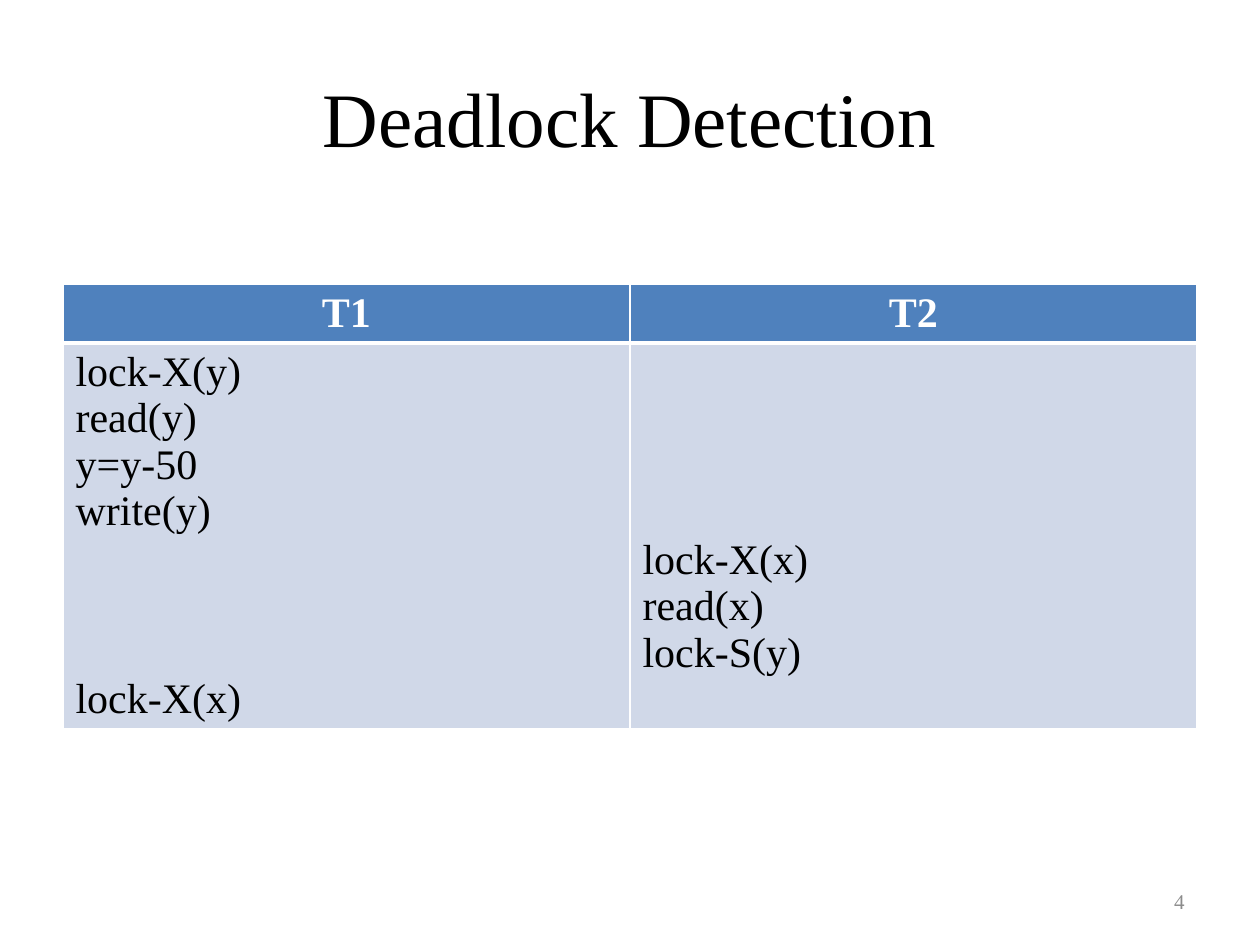
"""Builds the Deadlock Detection slide with its two-transaction schedule."""
from dataclasses import dataclass

from lxml import etree
from pptx import Presentation
from pptx import util as u
from pptx.dml.color import RGBColor
from pptx.enum import text
from pptx.oxml import ns

PX = 914400 / 126
LINE = 47
CELL_PAD = 6


@dataclass(frozen=True)
class Theme:
    font: str = "Times New Roman"
    ink: str = "000000"
    paper: str = "FFFFFF"
    header: str = "4F81BD"
    body: str = "D0D8E8"
    muted: str = "8C8C8C"
    title_size: int = 44
    table_size: int = 24
    number_size: int = 12
    thin: int = 1
    thick: int = 3


THEME = Theme()


def px(count):
    return u.Emu(round(count * PX))


def write(frame, lines, size, color=THEME.ink, bold=False,
          align=text.PP_ALIGN.LEFT, gaps=None):
    for index, line in enumerate(lines):
        para = frame.paragraphs[0] if index == 0 else frame.add_paragraph()
        para.alignment = align
        if gaps and index in gaps:
            para.space_before = px(gaps[index])
        span = para.add_run()
        span.text = line
        span.font.name = THEME.font
        span.font.size = u.Pt(size)
        span.font.bold = bold
        span.font.color.rgb = RGBColor.from_string(color)


def place(shape, left, top, width, height):
    shape.left, shape.top = px(left), px(top)
    shape.width, shape.height = px(width), px(height)


def add_title(page, words):
    title = page.shapes.title
    place(title, 63, 38, 1134, 157)
    title.text_frame.vertical_anchor = text.MSO_ANCHOR.MIDDLE
    write(title.text_frame, [words], THEME.title_size, align=text.PP_ALIGN.CENTER)


def style_cell(cell, fill, top, bottom):
    properties = cell._tc.get_or_add_tcPr()
    widths = {"lnL": THEME.thin, "lnR": THEME.thin, "lnT": top, "lnB": bottom}
    for side, width in widths.items():
        line = etree.SubElement(properties, ns.qn(f"a:{side}"), w=str(u.Pt(width)))
        solid = etree.SubElement(line, ns.qn("a:solidFill"))
        etree.SubElement(solid, ns.qn("a:srgbClr"), val=THEME.paper)
    cell.fill.solid()
    cell.fill.fore_color.rgb = RGBColor.from_string(fill)


def add_schedule(page, transactions):
    table = page.shapes.add_table(
        2, len(transactions), px(63), px(284), px(1134), px(442)).table
    table.rows[0].height, table.rows[1].height = px(58), px(384)
    for column, (name, steps, lead, gaps) in enumerate(transactions):
        heading, body = table.cell(0, column), table.cell(1, column)
        style_cell(heading, THEME.header, THEME.thin, THEME.thick)
        style_cell(body, THEME.body, THEME.thick, THEME.thin)
        write(heading.text_frame, [name], THEME.table_size, color=THEME.paper,
              bold=True, align=text.PP_ALIGN.CENTER)
        body.margin_top = px(CELL_PAD + lead * LINE)
        write(body.text_frame, steps, THEME.table_size,
              gaps={step: count * LINE for step, count in gaps.items()})


def add_number(page, number):
    box = page.shapes.add_textbox(px(903), px(876), px(294), px(50))
    box.text_frame.word_wrap = True
    box.text_frame.vertical_anchor = text.MSO_ANCHOR.MIDDLE
    write(box.text_frame, [number], THEME.number_size, color=THEME.muted,
          align=text.PP_ALIGN.RIGHT)


def main():
    deck = Presentation()
    deck.slide_width, deck.slide_height = px(1260), px(945)
    page = deck.slides.add_slide(deck.slide_layouts[5])
    add_title(page, "Deadlock Detection")
    add_schedule(page, [
        ("T1", ["lock-X(y)", "read(y)", "y=y-50", "write(y)", "lock-X(x)"], 0, {4: 3}),
        ("T2", ["lock-X(x)", "read(x)", "lock-S(y)"], 4, {}),
    ])
    add_number(page, "4")
    deck.save("out.pptx")


if __name__ == "__main__":
    main()
